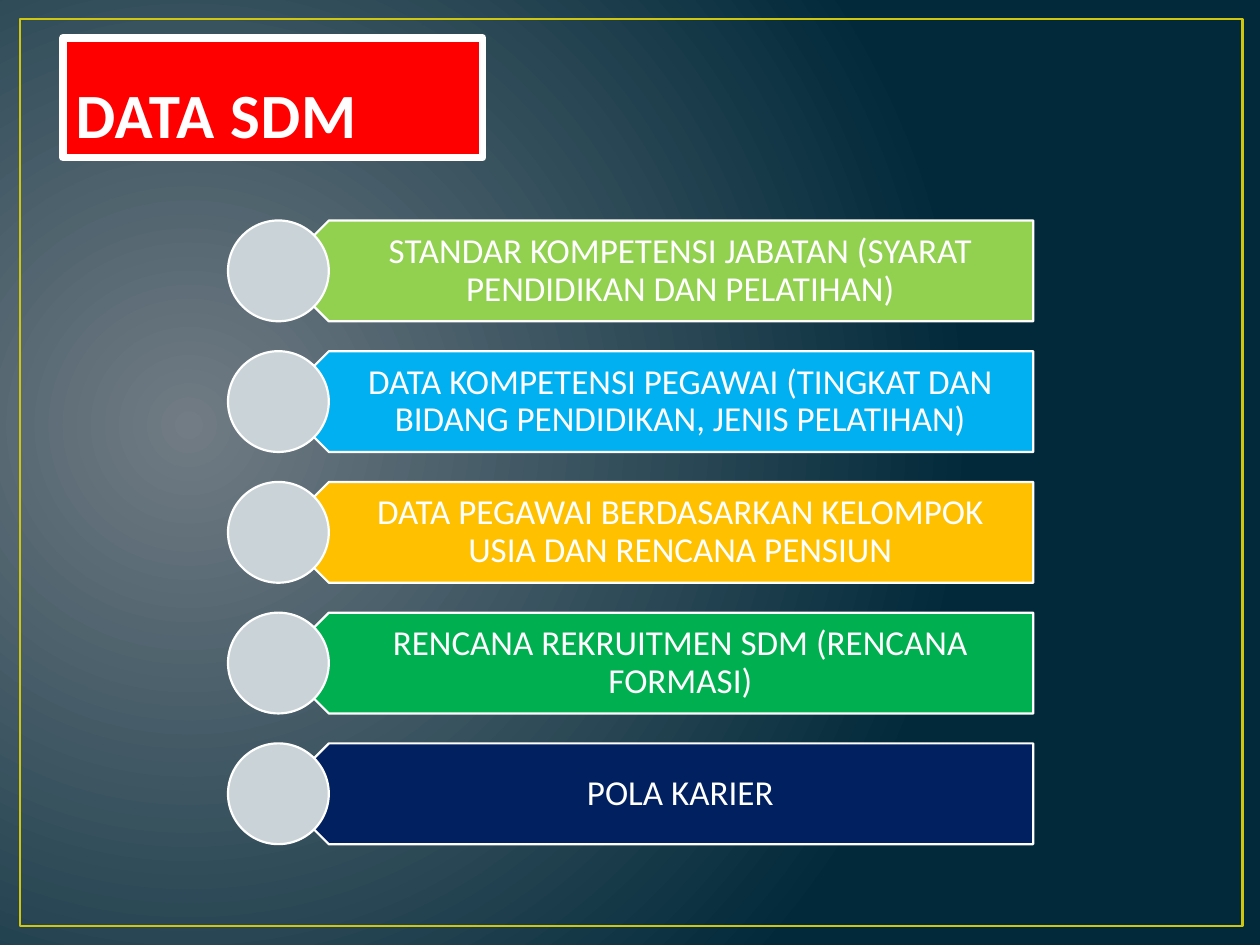
from lxml.etree import SubElement
from pptx import Presentation
from pptx.dml.color import RGBColor
from pptx.enum.shapes import MSO_SHAPE as Shape
from pptx.enum.text import MSO_ANCHOR as Anchor, MSO_AUTO_SIZE as AutoSize, PP_ALIGN as Align
from pptx.oxml.ns import qn
from pptx.util import Inches, Pt

FONT = "Calibri"
WHITE = "FFFFFF"
ITEMS = [
    ("STANDAR KOMPETENSI JABATAN (SYARAT PENDIDIKAN DAN PELATIHAN)", "92D050"),
    ("DATA KOMPETENSI PEGAWAI (TINGKAT DAN BIDANG PENDIDIKAN, JENIS PELATIHAN)", "00B0F0"),
    ("DATA PEGAWAI BERDASARKAN KELOMPOK USIA DAN RENCANA PENSIUN", "FFC000"),
    ("RENCANA REKRUITMEN SDM (RENCANA FORMASI)", "00B050"),
    ("POLA KARIER", "002060"),
]


def color(hex_string):
    """Turn a hex string into a colour."""
    return RGBColor.from_string(hex_string)


def style(shape, fill, line, width):
    """Set the fill (None for no fill) and outline of a shape."""
    if fill:
        shape.fill.solid()
        shape.fill.fore_color.rgb = color(fill)
    else:
        shape.fill.background()
    shape.line.color.rgb = color(line)
    shape.line.width = Pt(width)


def add_shape(shapes, kind, box, fill, line, width):
    """Add a preset shape without shadow in a box given in inches."""
    shape = shapes.add_shape(kind, *map(Inches, box))
    shape.shadow.inherit = False
    style(shape, fill, line, width)
    return shape


def set_font(paragraph, size, hex_string, bold=False):
    """Set the font of a whole paragraph."""
    font = paragraph.font
    font.name, font.size, font.bold = FONT, Pt(size), bold
    font.color.rgb = color(hex_string)


def set_background(slide):
    """Fill the background with a circular gradient centred on the left."""
    fill = slide.background.fill
    fill.gradient()
    for stop, position, hex_string in zip(fill.gradient_stops, (0, 1), ("717C84", "01293A")):
        stop.position = position
        stop.color.rgb = color(hex_string)
    gradient = slide.element.find(".//" + qn("a:gradFill"))
    linear = gradient.find(qn("a:lin"))
    if linear is not None:
        gradient.remove(linear)
    circle = SubElement(gradient, qn("a:path"), {"path": "circle"})
    SubElement(circle, qn("a:fillToRect"), {"l": "15000", "t": "50000", "r": "85000", "b": "60000"})


def place_title(slide, box, text):
    """Place and format the title placeholder."""
    title = slide.shapes.title
    title.left, title.top, title.width, title.height = map(Inches, box)
    style(title, "FF0000", WHITE, 4.5)
    frame = title.text_frame
    frame.text = text
    frame.auto_size = AutoSize.NONE
    frame.vertical_anchor = Anchor.BOTTOM
    paragraph = frame.paragraphs[0]
    paragraph.alignment = Align.LEFT
    set_font(paragraph, 36, "FEFEFE", bold=True)
    paragraph.runs[0].font._element.set("spc", "50")


def add_row(shapes, box, text, fill):
    """Add one row: a left-pointing bar, its text and a circle over the tip."""
    left, top, width, height = box
    radius = height / 2
    bar_box = (left + radius, top, width - radius, height)
    bar = add_shape(shapes, Shape.PENTAGON, bar_box, fill, WHITE, 1.25)
    bar.rotation = 180

    text_left = left + radius * 1.5
    label = shapes.add_textbox(*map(Inches, (text_left, top, left + width - text_left, height)))
    frame = label.text_frame
    frame.word_wrap = True
    frame.vertical_anchor = Anchor.MIDDLE
    frame.margin_left, frame.margin_right = Inches(0.35), Inches(0.16)
    frame.margin_top = frame.margin_bottom = Inches(0.08)
    frame.text = text
    paragraph = frame.paragraphs[0]
    paragraph.alignment = Align.CENTER
    paragraph.line_spacing = 0.9
    set_font(paragraph, 20, WHITE)

    add_shape(shapes, Shape.OVAL, (left, top, height, height), "CAD4D8", WHITE, 1.25)


def add_list(slide, box, items, row_height):
    """Spread the rows evenly over the height of the box, in one group."""
    left, top, width, height = box
    group = slide.shapes.add_group_shape()
    pitch = (height - row_height) / (len(items) - 1)
    for index, (text, fill) in enumerate(items):
        add_row(group.shapes, (left, top + index * pitch, width, row_height), text, fill)


def main():
    """Build the slide and save it."""
    presentation = Presentation()
    presentation.slide_width, presentation.slide_height = Inches(10), Inches(7.5)
    slide = presentation.slides.add_slide(presentation.slide_layouts[5])
    set_background(slide)
    add_shape(slide.shapes, Shape.RECTANGLE, (0.16, 0.15, 9.7, 7.2), None, "CFC60D", 1.5)
    place_title(slide, (0.5, 0.3, 3.33, 0.95), "DATA SDM")
    add_list(slide, (1.81, 1.75, 6.39, 4.95), ITEMS, 0.8)
    presentation.save("out.pptx")


if __name__ == "__main__":
    main()
